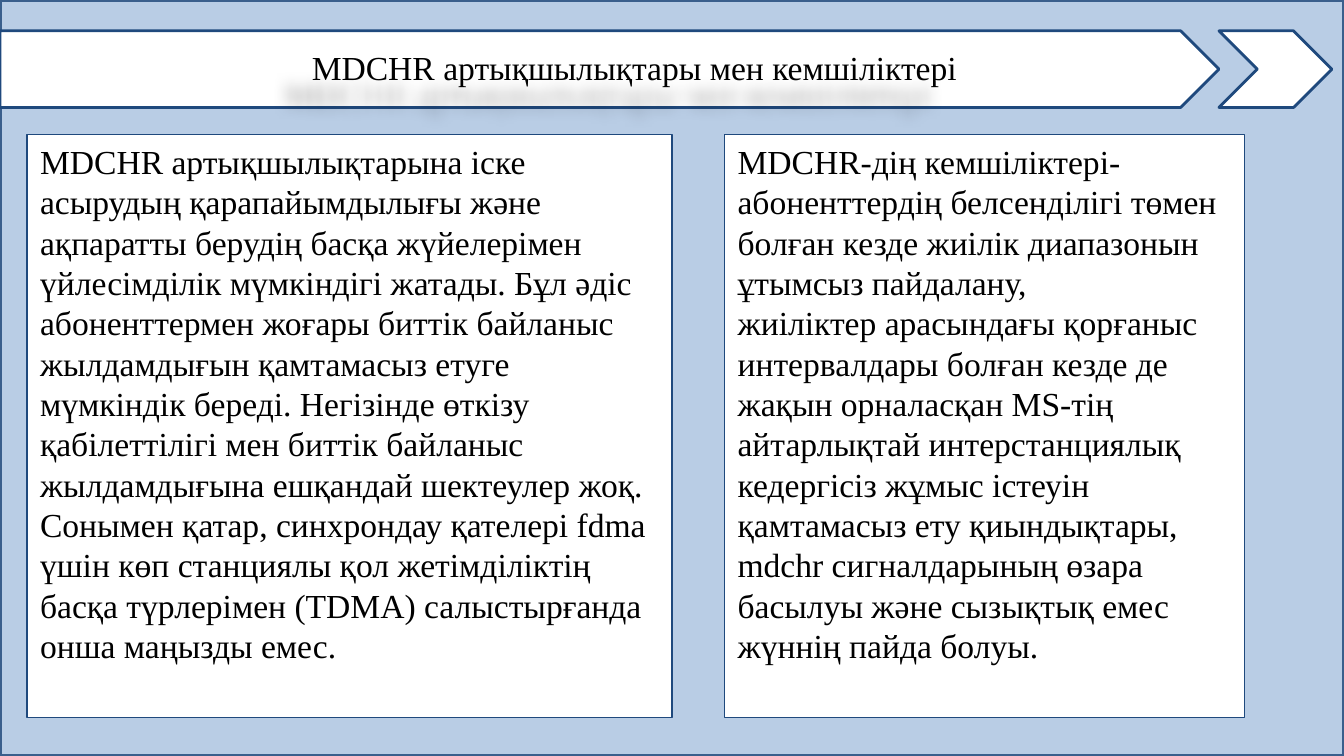
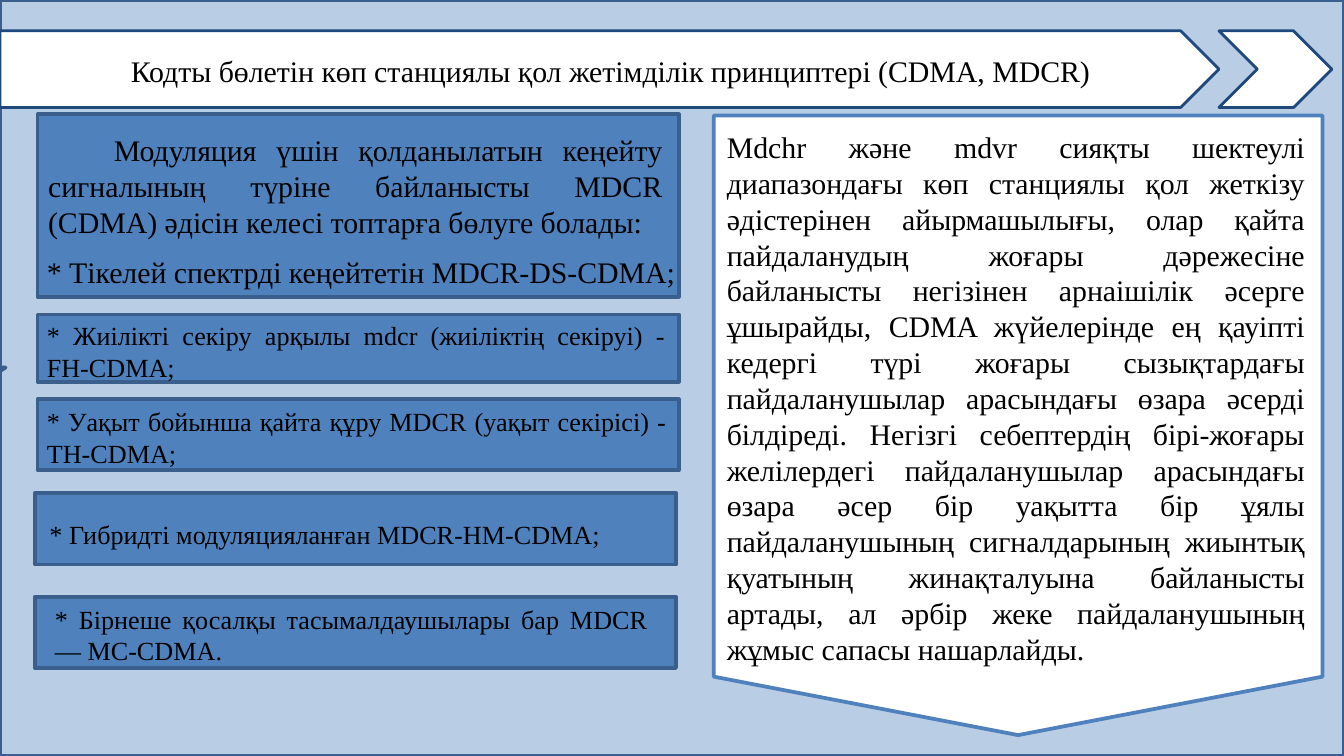
from lxml.etree import SubElement
from pptx import Presentation
from pptx.dml.color import RGBColor
from pptx.enum.shapes import MSO_SHAPE
from pptx.enum.text import MSO_ANCHOR, PP_ALIGN
from pptx.oxml.ns import qn
from pptx.util import Inches, Pt

SKY = RGBColor(0xB9, 0xCD, 0xE5)
BLUE = RGBColor(0x4F, 0x81, 0xBD)
STEEL = RGBColor(0x3A, 0x5F, 0x8C)
NAVY = RGBColor(0x1F, 0x49, 0x7D)
WHITE = RGBColor(0xFF, 0xFF, 0xFF)
BLACK = RGBColor(0x00, 0x00, 0x00)
FONT = "Times New Roman"

# The grid has 100 columns across and 56.25 square rows down.
COLS, ROWS = 100, 56.25
UNIT = Inches(0.1)

deck = Presentation()
deck.slide_width = int(COLS * UNIT)
deck.slide_height = int(ROWS * UNIT)


def draw(slide, kind, area, fill, edge, weight):
    """Add a filled, outlined shape; area is left, top, width, height in grid cells."""
    shape = slide.shapes.add_shape(kind, *[int(n * UNIT) for n in area])
    shape.shadow.inherit = False
    shape.fill.solid()
    shape.fill.fore_color.rgb = fill
    shape.line.color.rgb = edge
    shape.line.width = Pt(weight)
    return shape


def write(shape, texts, size, align=PP_ALIGN.LEFT, space=0, indent=0):
    """Fill a shape with paragraphs; indent is the first line's, in grid cells."""
    frame = shape.text_frame
    frame.word_wrap = True
    frame.vertical_anchor = MSO_ANCHOR.TOP
    for n, text in enumerate(texts):
        para = frame.paragraphs[0] if n == 0 else frame.add_paragraph()
        para.text = text
        para.alignment = align
        para.space_before = para.space_after = Pt(space)
        para.font.name = FONT
        para.font.size = Pt(size)
        para.font.color.rgb = BLACK
        if indent:
            props = para._p.get_or_add_pPr()
            props.set("marL", "0")
            props.set("indent", str(int(indent * UNIT)))
    return frame


# Shared backdrop and title band
pages = []
for n in range(2):
    page = deck.slides.add_slide(deck.slide_layouts[6])
    draw(page, MSO_SHAPE.RECTANGLE, (0, 0, COLS, ROWS), SKY, STEEL, 2)
    draw(page, MSO_SHAPE.PENTAGON, (0, 2.3, 90.7, 5.7), WHITE, NAVY, 1.5)
    draw(page, MSO_SHAPE.CHEVRON, (90.7, 2.3, 8.4, 5.7), WHITE, NAVY, 1.5)
    pages.append(page)
pros, codes = pages

# Slide 1: strengths and weaknesses
title = pros.shapes.add_textbox(0, int(3.1 * UNIT), COLS * UNIT, int(3.8 * UNIT))
frame = write(title, ["MDCHR артықшылықтары мен кемшіліктері"], 18, indent=22.5)
frame.margin_left = frame.margin_right = Inches(0.07)
frame.margin_top = frame.margin_bottom = Inches(0.04)
glow = SubElement(SubElement(title._element.spPr, qn("a:effectLst")), qn("a:outerShdw"),
                  blurRad=str(Pt(8)), dist=str(Pt(20)), dir=str(139 * 60000))
tint = SubElement(glow, qn("a:srgbClr"), val=str(BLACK))
SubElement(tint, qn("a:alpha"), val="35000")

panels = [
    (2, 48, [
        "MDCHR артықшылықтарына іске асырудың қарапайымдылығы және ақпаратты "
        "берудің басқа жүйелерімен үйлесімділік мүмкіндігі жатады. Бұл әдіс "
        "абоненттермен жоғары биттік байланыс жылдамдығын қамтамасыз етуге "
        "мүмкіндік береді. Негізінде өткізу қабілеттілігі мен биттік байланыс "
        "жылдамдығына ешқандай шектеулер жоқ. Сонымен қатар, синхрондау қателері "
        "fdma үшін көп станциялы қол жетімділіктің басқа түрлерімен (TDMA) "
        "салыстырғанда онша маңызды емес."]),
    (53.9, 38.7, [
        "MDCHR-дің кемшіліктері-абоненттердің белсенділігі төмен болған кезде "
        "жиілік диапазонын ұтымсыз пайдалану,",
        "жиіліктер арасындағы қорғаныс интервалдары болған кезде де жақын "
        "орналасқан MS-тің айтарлықтай интерстанциялық кедергісіз жұмыс істеуін "
        "қамтамасыз ету қиындықтары,",
        "mdchr сигналдарының өзара басылуы және сызықтық емес жүннің пайда болуы."]),
]
for left, width, texts in panels:
    panel = draw(pros, MSO_SHAPE.RECTANGLE, (left, 10, width, 43.4), WHITE, NAVY, 0.75)
    write(panel, texts, 18)

# Slide 2: groups of code division on the left, the main threat on the right
plate = draw(codes, MSO_SHAPE.PENTAGON, (52.7, 9, 46.1, 45.3), WHITE, BLUE, 2)
plate.rotation = 90
plate.adjustments[0] = 0.096

LOW = (1.46, -0.07, 1.48, -0.06, 1.5, -0.07)
HIGH = (0.85, -0.06, 0.79, -0.05, 0.79, -0.06)
boxes = [(2.8, 8.5, 13.6, LOW), (2.8, 23.4, 5, HIGH), (2.8, 29.7, 5.3, LOW),
         (2.6, 36.7, 5.3, LOW), (2.6, 44.4, 5.3, LOW)]
for left, top, height, bends in boxes:
    box = draw(codes, MSO_SHAPE.LINE_CALLOUT_2, (left, top, 47.7, height), BLUE, STEEL, 2)
    for n, bend in enumerate(bends):
        box.adjustments[n] = bend

LEFT, CENTER, FULL = PP_ALIGN.LEFT, PP_ALIGN.CENTER, PP_ALIGN.JUSTIFY
notes = [
    ((7.6, 2.8, 75.7, 4.4), 16, CENTER, 0, 0,
     "Кодты бөлетін көп станциялы қол жетімділік принциптері (CDMA, MDCR)"),
    ((53.1, 9.1, 45, 41.4), 16, FULL, 6, 0,
     "Mdchr және mdvr сияқты шектеулі диапазондағы көп станциялы қол жеткізу "
     "әдістерінен айырмашылығы, олар қайта пайдаланудың жоғары дәрежесіне "
     "байланысты негізінен арнаішілік әсерге ұшырайды, CDMA жүйелерінде ең "
     "қауіпті кедергі түрі жоғары сызықтардағы пайдаланушылар арасындағы өзара "
     "әсерді білдіреді. Негізгі себептердің бірі-жоғары желілердегі "
     "пайдаланушылар арасындағы өзара әсер бір уақытта бір ұялы пайдаланушының "
     "сигналдарының жиынтық қуатының жинақталуына байланысты артады, ал әрбір "
     "жеке пайдаланушының жұмыс сапасы нашарлайды."),
    ((2.6, 9.3, 47.7, 9.1), 16, FULL, 0, 4.9,
     "Модуляция үшін қолданылатын кеңейту сигналының түріне байланысты MDCR "
     "(CDMA) әдісін келесі топтарға бөлуге болады:"),
    ((2.5, 18.4, 50, 3.7), 16, LEFT, 0, 0,
     "* Тікелей спектрді кеңейтетін MDCR-DS-CDMA;"),
    ((2.5, 23.3, 48, 5.7), 14, FULL, 6, 0,
     "* Жиілікті секіру арқылы mdcr (жиіліктің секіруі) - FH-CDMA;"),
    ((2.5, 29.7, 48.1, 5.7), 14, FULL, 6, 0,
     "* Уақыт бойынша қайта құру MDCR (уақыт секірісі) - TH-CDMA;"),
    ((2.7, 38.1, 50, 3.4), 14, FULL, 6, 0,
     "* Гибридті модуляцияланған MDCR-HM-CDMA;"),
    ((3.1, 44.4, 46.1, 5.7), 14, FULL, 6, 0,
     "* Бірнеше қосалқы тасымалдаушылары бар MDCR — MC-CDMA."),
]
for area, size, align, space, indent, text in notes:
    note = codes.shapes.add_textbox(*[int(n * UNIT) for n in area])
    frame = write(note, [text], size, align, space, indent)
    if align == CENTER:
        frame.paragraphs[0].line_spacing = 1.25

deck.save("out.pptx")
